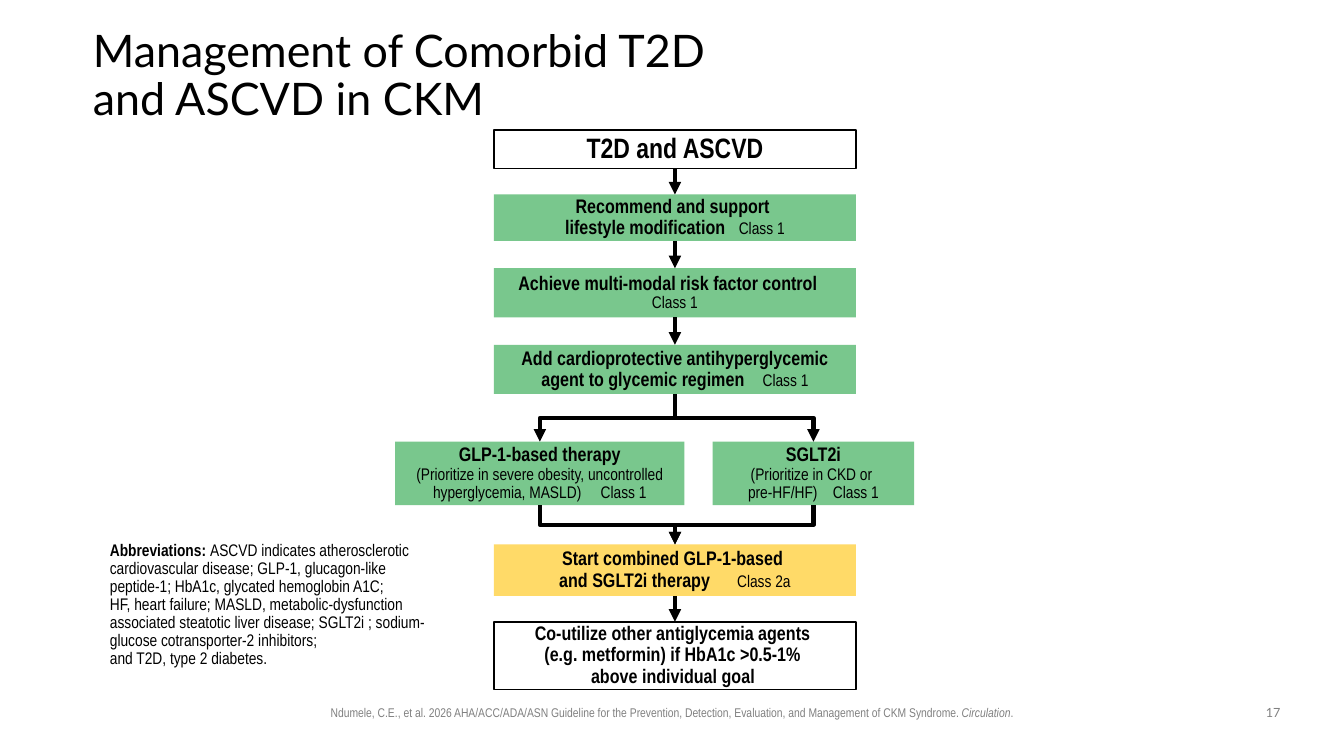
from dataclasses import dataclass

from lxml import etree
from pptx import Presentation
from pptx.dml.color import RGBColor
from pptx.enum.shapes import MSO_CONNECTOR, MSO_SHAPE
from pptx.enum.text import MSO_ANCHOR, MSO_AUTO_SIZE, PP_ALIGN
from pptx.oxml.ns import qn
from pptx.util import Cm, Pt

RECT = MSO_SHAPE.RECTANGLE
STRAIGHT, ELBOW = MSO_CONNECTOR.STRAIGHT, MSO_CONNECTOR.ELBOW
LEFT, CENTER = PP_ALIGN.LEFT, PP_ALIGN.CENTER
TOP, MIDDLE, BOTTOM = MSO_ANCHOR.TOP, MSO_ANCHOR.MIDDLE, MSO_ANCHOR.BOTTOM
NO_FIT = MSO_AUTO_SIZE.NONE
BELOW, ABOVE = 2, 0  # connection sites of a rectangle


@dataclass(frozen=True)
class Theme:
    black: RGBColor = RGBColor(0x00, 0x00, 0x00)
    white: RGBColor = RGBColor(0xFF, 0xFF, 0xFF)
    gray: RGBColor = RGBColor(0x80, 0x80, 0x80)
    green: RGBColor = RGBColor(0x79, 0xC7, 0x8D)
    yellow: RGBColor = RGBColor(0xFF, 0xDA, 0x68)
    heading_font: str = "Lato"
    body_font: str = "Arial Narrow"
    title: int = 32
    start: int = 20
    step: int = 14
    note: int = 12
    small: int = 9
    outline: float = 1
    arrow: float = 3
    space_width: float = 0.23  # width of a space, as a share of the type size


THEME = Theme()


@dataclass
class Run:
    text: str
    size: float = THEME.step
    bold: bool = False
    italic: bool = False
    gap: float = 0  # width in points when the run is a single wide space


def strong(text, size=THEME.step):
    return Run(text, size, bold=True)


def note(text):
    return Run(text, THEME.note)


def gap(points):
    return Run(" ", THEME.note, gap=points)


class SlideBuilder:
    def __init__(self, prs, theme):
        self.theme = theme
        self.slide = prs.slides.add_slide(prs.slide_layouts[5])

    def set_text(self, tf, paragraphs, align=CENTER, anchor=MIDDLE, spacing=None,
                 font=None, color=None):
        tf.word_wrap, tf.auto_size, tf.vertical_anchor = True, NO_FIT, anchor
        for i, runs in enumerate(paragraphs):
            p = tf.add_paragraph() if i else tf.paragraphs[0]
            p.alignment = align
            if spacing:
                p.line_spacing = spacing
            for run in runs:
                for j, text in enumerate(run.text.split("\n")):
                    if j:
                        p.add_line_break()
                    if text:
                        self.add_run(p, run, text, font, color)

    def add_run(self, p, run, text, font, color):
        r = p.add_run()
        r.text = text
        r.font.name = font or self.theme.body_font
        r.font.size = Pt(run.size)
        r.font.bold, r.font.italic = run.bold, run.italic
        r.font.color.rgb = color or self.theme.black
        if run.gap:
            extra = run.gap - self.theme.space_width * run.size
            r._r.get_or_add_rPr().set("spc", str(round(extra * 100)))

    def title(self, text, x, y, w, h):
        s = self.slide.shapes.title
        s.left, s.top, s.width, s.height = Cm(x), Cm(y), Cm(w), Cm(h)
        tf = s.text_frame
        tf.margin_left = tf.margin_right = tf.margin_top = tf.margin_bottom = 0
        self.set_text(tf, [[Run(text, self.theme.title)]], LEFT, spacing=0.9,
                      font=self.theme.heading_font)

    def text(self, paragraphs, x, y, w, h, inset=0.25, **style):
        s = self.slide.shapes.add_textbox(Cm(x), Cm(y), Cm(w), Cm(h))
        s.text_frame.margin_left = Cm(inset)
        self.set_text(s.text_frame, paragraphs, **style)

    def box(self, paragraphs, x, y, w, h, fill, outlined=False):
        s = self.slide.shapes.add_shape(RECT, Cm(x), Cm(y), Cm(w), Cm(h))
        s.shadow.inherit = False
        s.fill.solid()
        s.fill.fore_color.rgb = fill
        if outlined:
            s.line.color.rgb = self.theme.black
            s.line.width = Pt(self.theme.outline)
        else:
            s.line.fill.background()
        self.set_text(s.text_frame, paragraphs, spacing=0.9)
        return s

    def style_arrow(self, c):
        c.line.color.rgb = self.theme.black
        c.line.width = Pt(self.theme.arrow)
        sp_pr = c._element.spPr
        etree.SubElement(sp_pr.find(qn("a:ln")), qn("a:tailEnd"), type="triangle")
        etree.SubElement(sp_pr, qn("a:effectLst"))

    def arrow(self, upper, lower):
        c = self.slide.shapes.add_connector(STRAIGHT, 0, 0, 0, 0)
        c.begin_connect(upper, BELOW)
        c.end_connect(lower, ABOVE)
        self.style_arrow(c)

    def elbow(self, upper, lower):
        """Down, across, down: a horizontal elbow turned by a quarter."""
        x1, y1 = upper.left + upper.width // 2, upper.top + upper.height
        x2, y2 = lower.left + lower.width // 2, lower.top
        mid_x, mid_y = (x1 + x2) // 2, (y1 + y2) // 2
        half_w, half_h = (y2 - y1) // 2, abs(x2 - x1) // 2
        to_right = x2 > x1
        if to_right:
            half_w = -half_w  # mirrored before turning
        c = self.slide.shapes.add_connector(
            ELBOW, mid_x - half_w, mid_y - half_h, mid_x + half_w, mid_y + half_h)
        turn = 270 if to_right else 90
        c._element.spPr.find(qn("a:xfrm")).set("rot", str(turn * 60000))
        self.style_arrow(c)


def main():
    prs = Presentation()
    prs.slide_width, prs.slide_height = Cm(33.87), Cm(19.05)
    t = THEME
    s = SlideBuilder(prs, t)

    # Title
    s.title("Management of Comorbid T2D \nand ASCVD in CKM", 2.34, 1.02, 29.21, 1.83)

    # Steps on the central axis: text, top, height, fill, outlined
    steps = [
        ([strong("T2D and ASCVD", t.start)], 3.28, 0.97, t.white, True),
        ([strong("Recommend and support \nlifestyle modification"), gap(9.6),
          note("Class 1")], 4.9, 1.17, t.green, False),
        ([strong("Achieve multi-modal risk factor control"), gap(10),
          note("\nClass 1")], 6.76, 1.24, t.green, False),
        ([strong("Add cardioprotective antihyperglycemic agent to glycemic regimen"),
          gap(12.8), note("Class 1")], 8.69, 1.24, t.green, False),
        ([strong("Start combined GLP-1-based \nand SGLT2i therapy"), gap(19.2),
          note("Class 2a")], 13.72, 1.3, t.yellow, False),
        ([strong("Co-utilize other antiglycemia agents \n(e.g. metformin) if HbA1c "
                 ">0.5-1% \nabove individual goal"), gap(16)], 15.67, 1.7, t.white, True),
    ]
    start, lifestyle, risk, agent, combined, other = [
        s.box([runs], 12.45, y, 9.12, h, fill, outlined)
        for runs, y, h, fill, outlined in steps]

    # Two therapy branches
    glp1 = s.box([[strong("GLP-1-based therapy")],
                  [note("(Prioritize in severe obesity, uncontrolled hyperglycemia, MASLD)"),
                   gap(13.7), note("Class 1")]], 9.96, 11.13, 7.29, 1.6, t.green)
    sglt2i = s.box([[strong("SGLT2i")],
                    [note("(Prioritize in CKD or \npre-HF/HF)"), gap(10.9),
                     note("Class 1")]], 17.96, 11.13, 5.08, 1.6, t.green)

    # Arrows
    for upper, lower in [(start, lifestyle), (lifestyle, risk), (risk, agent),
                         (combined, other)]:
        s.arrow(upper, lower)
    for branch in (glp1, sglt2i):
        s.elbow(agent, branch)
        s.elbow(branch, combined)

    # Abbreviations
    s.text([[strong("Abbreviations: ", t.note),
             note("ASCVD indicates atherosclerotic cardiovascular disease; GLP-1, "
                  "glucagon-like peptide-1; HbA1c, glycated hemoglobin A1C; \n"
                  "HF, heart failure; MASLD, metabolic-dysfunction associated "
                  "steatotic liver disease; SGLT2i ; sodium-glucose cotransporter-2 "
                  "inhibitors; \nand T2D, type 2 diabetes.")]],
           2.77, 15.8, 8.48, 1.17, inset=0, align=LEFT, anchor=BOTTOM, spacing=0.9)

    # Source line and page number
    s.text([[Run("Ndumele, C.E., et al. 2026 AHA/ACC/ADA/ASN Guideline for the Prevention, "
                 "Detection, Evaluation, and Management of CKM Syndrome. ", t.small),
             Run("Circulation", t.small, italic=True), Run(".", t.small)]],
           5.99, 17.65, 21.89, 0.64, anchor=TOP, color=t.gray)
    s.text([[Run("17", t.small)]], 31.55, 17.65, 1.07, 0.66, anchor=TOP,
           font=t.heading_font, color=t.gray)

    prs.save("out.pptx")


if __name__ == "__main__":
    main()
